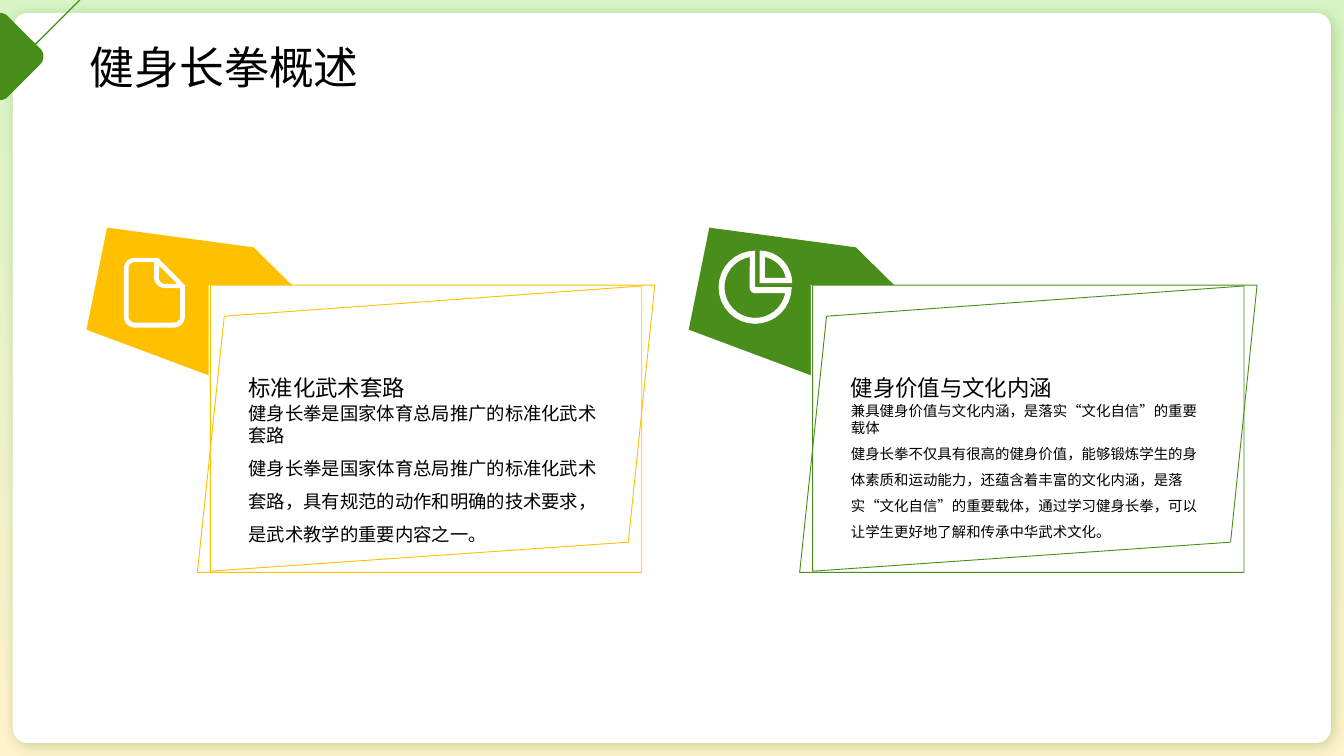
"""Build the slide that introduces fitness Changquan."""
from dataclasses import dataclass
from math import cos, radians, sin

from lxml.etree import SubElement
from pptx import Presentation
from pptx.dml.color import RGBColor
from pptx.enum.shapes import MSO_CONNECTOR, MSO_SHAPE
from pptx.enum.text import MSO_ANCHOR, MSO_AUTO_SIZE, PP_ALIGN
from pptx.oxml.ns import qn
from pptx.util import Inches, Pt


@dataclass(frozen=True)
class Theme:
    """Colours, type sizes and line widths."""
    font: str = "Noto Sans CJK SC"
    ink: str = "000000"
    white: str = "FFFFFF"
    green: str = "498E1B"
    gold: str = "FFC000"
    cream: str = "FFF2CC"
    mint: str = "D8F4C6"
    title: float = 32
    head: float = 16
    large: float = 13.1
    small: float = 10.3
    thin: float = 0.65
    rule: float = 1


COLS, ROWS = 32, 18
BANNER = [(0, 2.43), (9.61, 6.02), (3.98, 0.47), (0.49, 0)]
MASK = [(12.86, 6.05), (2.91, 6.58), (2.91, 1.37), (13.51, 1.37)]
FRAMES = [
    [(12.9, 7.49), (2.95, 8.18), (2.95, 1.37), (13.53, 1.37)],
    [(3.28, 2.11), (13.22, 1.39), (13.22, 8.21), (2.64, 8.21)],
]


def color(code):
    """Turn a hex code into a colour."""
    return RGBColor.from_string(code)


def arc(x, y, r, start, end, steps=24):
    """List points along an arc, clockwise from the right."""
    turns = [radians(start + (end - start) * i / steps) for i in range(steps + 1)]
    return [(x + r * cos(t), y + r * sin(t)) for t in turns]


def page():
    """Outline a sheet with a folded corner."""
    outer = (arc(1.15, 0.98, 0.26, 180, 270) + [(1.7, 0.72), (2.34, 1.37)]
             + arc(2.08, 2.12, 0.26, 0, 90) + arc(1.15, 2.12, 0.26, 90, 180))
    inner = (arc(1.15, 0.97, 0.15, 180, 270) + [(1.61, 0.82)]
             + arc(1.87, 1.18, 0.26, 180, 90) + [(2.23, 1.44)]
             + arc(2.08, 2.11, 0.15, 0, 90) + arc(1.15, 2.11, 0.15, 90, 180))
    fold = [(1.73, 0.91), (2.16, 1.34)] + arc(1.87, 1.19, 0.15, 90, 180)
    return [outer, inner, fold]


def pie():
    """Outline a pie with one quarter apart."""
    outer = [(1.58, 0.55), (1.58, 1.42)] + arc(1.58, 1.42, 0.87, 0, 270)
    inner = arc(1.58, 1.42, 0.73, 11, 260) + arc(1.58, 1.43, 0.13, 180, 90)
    slice_out = [(1.69, 1.32)] + arc(1.69, 1.32, 0.77, 270, 360)
    slice_in = [(1.81, 1.2)] + arc(1.69, 1.32, 0.63, 349, 281)
    return [outer, inner, slice_out, slice_in]


class Deck:
    """Hold the theme and the current slide."""

    def __init__(self, theme):
        """Open a title-only slide."""
        self.theme = theme
        self.prs = Presentation()
        self.prs.slide_width, self.prs.slide_height = Inches(13.333), Inches(7.5)
        self.slide = self.prs.slides.add_slide(self.prs.slide_layouts[5])
        self.shapes = self.slide.shapes

    def spot(self, x, y):
        """Turn columns and rows into slide lengths."""
        return (round(x * self.prs.slide_width / COLS),
                round(y * self.prs.slide_height / ROWS))

    def paint(self, shape, fill=None, line=None):
        """Set fill and line and drop the shadow."""
        shape.shadow.inherit = False
        if fill:
            shape.fill.solid()
            shape.fill.fore_color.rgb = color(fill)
        else:
            shape.fill.background()
        if line:
            shape.line.color.rgb = color(line)
            shape.line.width = Pt(self.theme.thin)
        else:
            shape.line.fill.background()
        return shape

    def box(self, kind, x, y, w, h, fill):
        """Add a filled preset shape."""
        shape = self.shapes.add_shape(kind, *self.spot(x, y), *self.spot(w, h))
        return self.paint(shape, fill)

    def shade(self, shape, tint):
        """Give a shape a soft shadow."""
        effects = shape.element.spPr.find(qn("a:effectLst"))
        outer = SubElement(effects, qn("a:outerShdw"), blurRad=str(Pt(10)),
                           dist=str(Pt(3)), dir="2700000", algn="tl", rotWithShape="0")
        tone = SubElement(outer, qn("a:srgbClr"), val=tint)
        SubElement(tone, qn("a:alpha"), val="30000")

    def line(self, start, end, tint):
        """Add a straight line."""
        rule = self.shapes.add_connector(
            MSO_CONNECTOR.STRAIGHT, *self.spot(*start), *self.spot(*end))
        rule.line.color.rgb = color(tint)
        rule.line.width = Pt(self.theme.rule)
        SubElement(rule.element.spPr, qn("a:effectLst"))

    def form(self, loops, left, top, fill=None, line=None):
        """Add an outline of one or more closed loops."""
        paths = [[self.spot(left + x, top + y) for x, y in loop] for loop in loops]
        pen = self.shapes.build_freeform(*paths[0][0])
        pen.add_line_segments(paths[0][1:], close=True)
        for path in paths[1:]:
            pen.move_to(*path[0])
            pen.add_line_segments(path[1:], close=True)
        self.paint(pen.convert_to_shape(), fill, line)

    def text(self, place, lines, size, leads, anchor, shape=None):
        """Set lines of text, each with its own leading."""
        x, y, w, h = place
        shape = shape or self.shapes.add_textbox(0, 0, 0, 0)
        shape.left, shape.top = self.spot(x, y)
        shape.width, shape.height = self.spot(w, h)
        frame = shape.text_frame
        frame.text = "\n".join(lines)
        frame.word_wrap, frame.auto_size = True, MSO_AUTO_SIZE.NONE
        frame.vertical_anchor = anchor
        frame.margin_left = frame.margin_right = 0
        frame.margin_top = frame.margin_bottom = 0
        for para, lead in zip(frame.paragraphs, leads):
            para.alignment = PP_ALIGN.LEFT
            para.line_spacing = Pt(round(size * lead, 1))
            para.font.size = Pt(size)
            para.font.color.rgb = color(self.theme.ink)
            para.font.name = self.theme.font
            props = para._p.pPr.find(qn("a:defRPr"))
            SubElement(props, qn("a:ea"), typeface=self.theme.font)

    def title(self, words):
        """Place the title above the backdrop."""
        shape = self.shapes.title
        self.shapes.element.append(shape.element)
        self.text((2.14, 0.62, 20.42, 1.13), [words], self.theme.title, [1.95],
                  MSO_ANCHOR.MIDDLE, shape)

    def panel(self, left, tint, icon, head, body, size):
        """Add a banner with its icon, frames and text."""
        top = 5.42
        self.form([BANNER], left, top, tint)
        self.form([MASK], left, top, self.theme.white)
        self.form(icon, left, top, self.theme.white)
        for frame in FRAMES:
            self.form([frame], left, top, line=tint)
        self.text((left + 3.86, top + 2.5, 8.45, 1.63), [head], self.theme.head,
                  [1.5], MSO_ANCHOR.BOTTOM)
        self.text((left + 3.86, top + 4.15, 8.45, 3.26), body, size,
                  [1.2, 1.8], MSO_ANCHOR.TOP)

    def back(self):
        """Draw the backdrop, card and corner."""
        theme = self.theme
        sky = self.box(MSO_SHAPE.RECTANGLE, 0, 0, COLS, ROWS, theme.cream)
        sky.fill.gradient()
        sky.fill.gradient_angle = 90
        for stop, tint in zip(sky.fill.gradient_stops, (theme.cream, theme.mint)):
            stop.color.rgb = color(tint)
        card = self.box(MSO_SHAPE.ROUNDED_RECTANGLE, 0.31, 0.31, 31.38, 17.38, theme.white)
        card.adjustments[0] = 0.02
        self.shade(card, theme.green)
        self.line((0.84, 1.06), (1.9, 0), theme.green)
        gem = self.box(MSO_SHAPE.ROUNDED_RECTANGLE, -0.82, 0.53, 1.63, 1.63, theme.green)
        gem.rotation = 45


def main():
    """Build and save the slide."""
    theme = Theme()
    deck = Deck(theme)
    deck.back()
    deck.panel(2.06, theme.gold, page(), "标准化武术套路", [
        "健身长拳是国家体育总局推广的标准化武术套路",
        "健身长拳是国家体育总局推广的标准化武术套路，具有规范的动作和明确的技术要求，是武术教学的重要内容之一。",
    ], theme.large)
    deck.panel(16.4, theme.green, pie(), "健身价值与文化内涵", [
        "兼具健身价值与文化内涵，是落实“文化自信”的重要载体",
        "健身长拳不仅具有很高的健身价值，能够锻炼学生的身体素质和运动能力，还蕴含着丰富的文化内涵，"
        "是落实“文化自信”的重要载体，通过学习健身长拳，可以让学生更好地了解和传承中华武术文化。",
    ], theme.small)
    deck.title("健身长拳概述")
    deck.prs.save("out.pptx")


if __name__ == "__main__":
    main()
